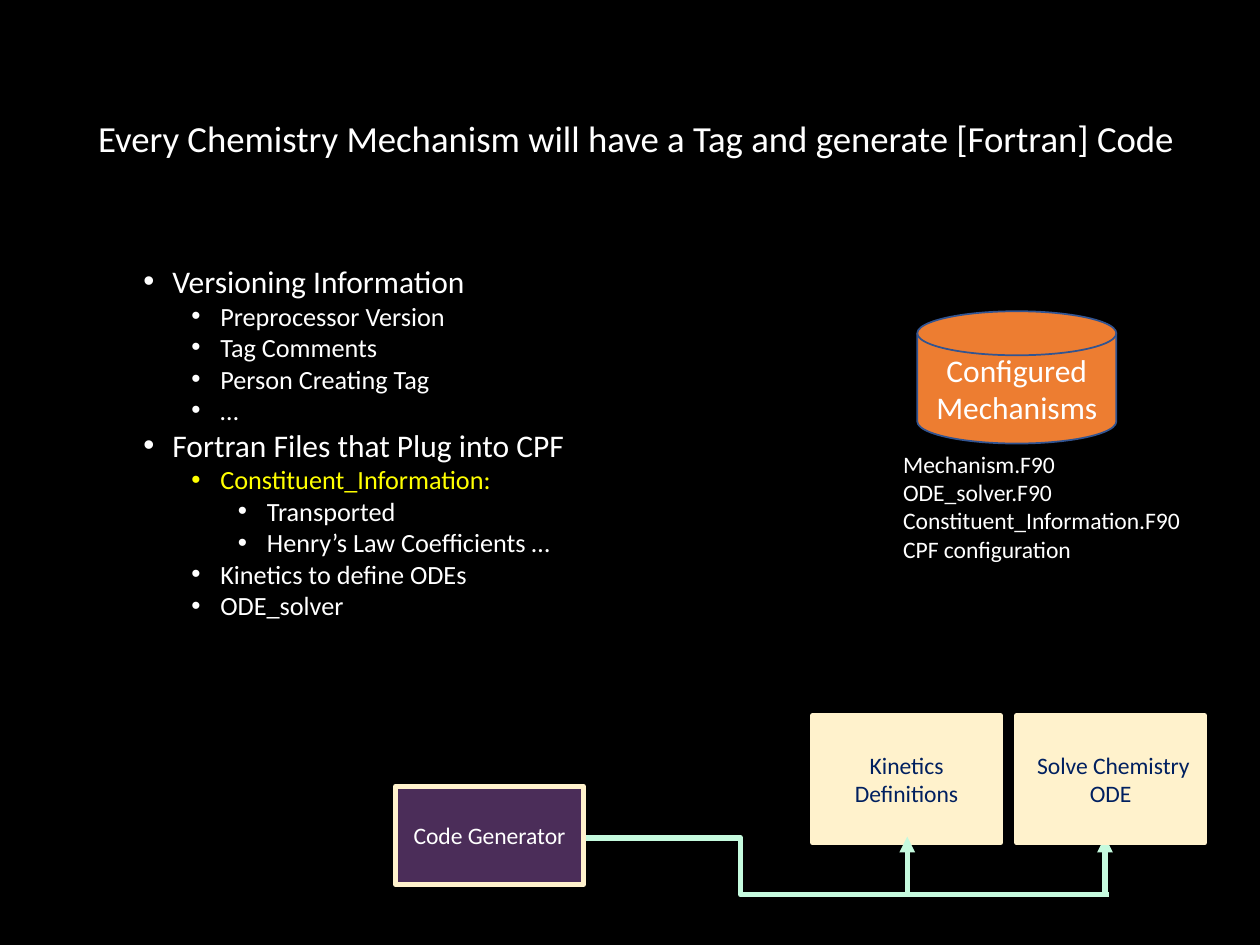
"""Build the slide on chemistry mechanism tags and generated Fortran code."""
from dataclasses import dataclass

from lxml import etree
from pptx import Presentation
from pptx.dml.color import RGBColor
from pptx.enum.shapes import MSO_CONNECTOR, MSO_SHAPE
from pptx.enum.text import MSO_ANCHOR, MSO_AUTO_SIZE, PP_ALIGN
from pptx.oxml.ns import qn
from pptx.util import Pt

RECTANGLE, DISK = MSO_SHAPE.RECTANGLE, MSO_SHAPE.FLOWCHART_MAGNETIC_DISK
STRAIGHT, ELBOW = MSO_CONNECTOR.STRAIGHT, MSO_CONNECTOR.ELBOW
TOP, MIDDLE = MSO_ANCHOR.TOP, MSO_ANCHOR.MIDDLE
LEFT, CENTER = PP_ALIGN.LEFT, PP_ALIGN.CENTER
FIT_SHAPE, NO_FIT = MSO_AUTO_SIZE.SHAPE_TO_FIT_TEXT, MSO_AUTO_SIZE.NONE

EMU_PER_PX = 9144
FONT = "Calibri"
BULLET_HANG = 23
BULLET_INDENTS = (23, 61, 98)
COLORS = {
    "background": "000000",
    "text": "FFFFFF",
    "highlight": "FFFF00",
    "generator": "D883FF",
    "cream": "FFF2CC",
    "navy": "002060",
    "flow": "C5FADE",
    "store": "ED7D31",
    "store_edge": "325491",
}


@dataclass(frozen=True)
class Line:
    text: str
    size: float = 13.5
    color: str = "text"
    level: int | None = None


@dataclass(frozen=True)
class Block:
    box: tuple[int, int, int, int]
    lines: tuple[Line, ...]
    anchor: MSO_ANCHOR = TOP
    wrap: bool = False


@dataclass(frozen=True)
class Node:
    box: tuple[int, int, int, int]
    lines: tuple[Line, ...]
    fill: str = "cream"
    edge: str = "cream"
    edge_width: int = 3
    outline: MSO_SHAPE = RECTANGLE
    opacity: int = 100


@dataclass(frozen=True)
class Flow:
    start: tuple[int, int]
    end: tuple[int, int]
    bend: float | None = None


TITLE = Block(
    (68, 67, 897, 85),
    (Line("Every Chemistry Mechanism will have a Tag and generate [Fortran] Code", 21),),
    MIDDLE,
    True,
)
CONTENTS = Block(
    (104, 203, 358, 298),
    (
        Line("Versioning Information", 18, level=0),
        Line("Preprocessor Version", 15, level=1),
        Line("Tag Comments", 15, level=1),
        Line("Person Creating Tag", 15, level=1),
        Line("…", 15, level=1),
        Line("Fortran Files that Plug into CPF", 18, level=0),
        Line("Constituent_Information:", 15, "highlight", 1),
        Line("Transported", 15, level=2),
        Line("Henry’s Law Coefficients …", 15, level=2),
        Line("Kinetics to define ODEs", 15, level=1),
        Line("ODE_solver", 15, level=1),
    ),
)
GENERATED_FILES = Block(
    (707, 352, 244, 101),
    tuple(
        Line(name)
        for name in (
            "Mechanism.F90",
            "ODE_solver.F90",
            "Constituent_Information.F90",
            "CPF configuration",
        )
    ),
)
GENERATOR = Node(
    (314, 624, 149, 78), (Line("Code Generator"),), fill="generator", opacity=35
)
KINETICS = Node(
    (645, 568, 149, 101),
    (Line("Kinetics", color="navy"), Line("Definitions", color="navy")),
)
SOLVER = Node(
    (807, 568, 149, 101),
    (Line(" Solve Chemistry", color="navy"), Line("ODE", color="navy")),
)
STORE = Node(
    (728, 247, 158, 105),
    (Line("Configured", 18), Line("Mechanisms", 18)),
    "store",
    "store_edge",
    1,
    DISK,
)
FLOWS = (
    Flow((877, 709), (877, 664)),
    Flow((720, 709), (720, 664)),
    Flow((465, 665), (880, 710), 0.296),
)


def px(*lengths: int) -> list[int]:
    return [length * EMU_PER_PX for length in lengths]


def rgb(name: str) -> RGBColor:
    return RGBColor.from_string(COLORS[name])


def apply(target, values: dict) -> None:
    for attribute, value in values.items():
        setattr(target, attribute, value)


def write_lines(frame, lines: tuple[Line, ...], align: PP_ALIGN) -> None:
    for index, line in enumerate(lines):
        paragraph = frame.add_paragraph() if index else frame.paragraphs[0]
        paragraph.alignment = align
        run = paragraph.add_run()
        run.text = line.text
        apply(run.font, {"size": Pt(line.size), "name": FONT})
        run.font.color.rgb = rgb(line.color)
        if line.level is not None:
            paragraph.level = line.level
            properties = paragraph._p.get_or_add_pPr()
            margin, hang = px(BULLET_INDENTS[line.level], -BULLET_HANG)
            properties.set("marL", str(margin))
            properties.set("indent", str(hang))
            etree.SubElement(properties, qn("a:buFont"), typeface="Arial")
            etree.SubElement(properties, qn("a:buChar"), char="•")


def draw_block(slide, block: Block) -> None:
    frame = slide.shapes.add_textbox(*px(*block.box)).text_frame
    fit = NO_FIT if block.wrap else FIT_SHAPE
    apply(frame, {"word_wrap": block.wrap, "vertical_anchor": block.anchor, "auto_size": fit})
    write_lines(frame, block.lines, LEFT)


def draw_node(slide, node: Node) -> None:
    shape = slide.shapes.add_shape(node.outline, *px(*node.box))
    shape.shadow.inherit = False
    shape.fill.solid()
    shape.fill.fore_color.rgb = rgb(node.fill)
    if node.opacity < 100:
        tint = shape._element.spPr.find(qn("a:solidFill"))[0]
        etree.SubElement(tint, qn("a:alpha"), val=str(node.opacity * 1000))
    shape.line.color.rgb = rgb(node.edge)
    shape.line.width = Pt(node.edge_width)
    apply(shape.text_frame, {"word_wrap": True, "vertical_anchor": MIDDLE})
    write_lines(shape.text_frame, node.lines, CENTER)


def draw_flow(slide, flow: Flow) -> None:
    kind = STRAIGHT if flow.bend is None else ELBOW
    connector = slide.shapes.add_connector(kind, *px(*flow.start, *flow.end))
    connector.line.color.rgb = rgb("flow")
    connector.line.width = Pt(3)
    properties = connector._element.spPr
    if flow.bend is None:
        etree.SubElement(properties.find(qn("a:ln")), qn("a:tailEnd"), type="triangle")
    else:
        guides = properties.find(qn("a:prstGeom")).find(qn("a:avLst"))
        formula = f"val {round(flow.bend * 100000)}"
        etree.SubElement(guides, qn("a:gd"), name="adj1", fmla=formula)
    etree.SubElement(properties, qn("a:effectLst"))


def main() -> None:
    deck = Presentation()
    width, height = px(1000, 750)
    apply(deck, {"slide_width": width, "slide_height": height})
    slide = deck.slides.add_slide(deck.slide_layouts[6])
    slide.background.fill.solid()
    slide.background.fill.fore_color.rgb = rgb("background")
    for block in (TITLE, CONTENTS):
        draw_block(slide, block)
    for node in (GENERATOR, KINETICS):
        draw_node(slide, node)
    for flow in FLOWS:
        draw_flow(slide, flow)
    for node in (SOLVER, STORE):
        draw_node(slide, node)
    draw_block(slide, GENERATED_FILES)
    deck.save("out.pptx")


if __name__ == "__main__":
    main()
